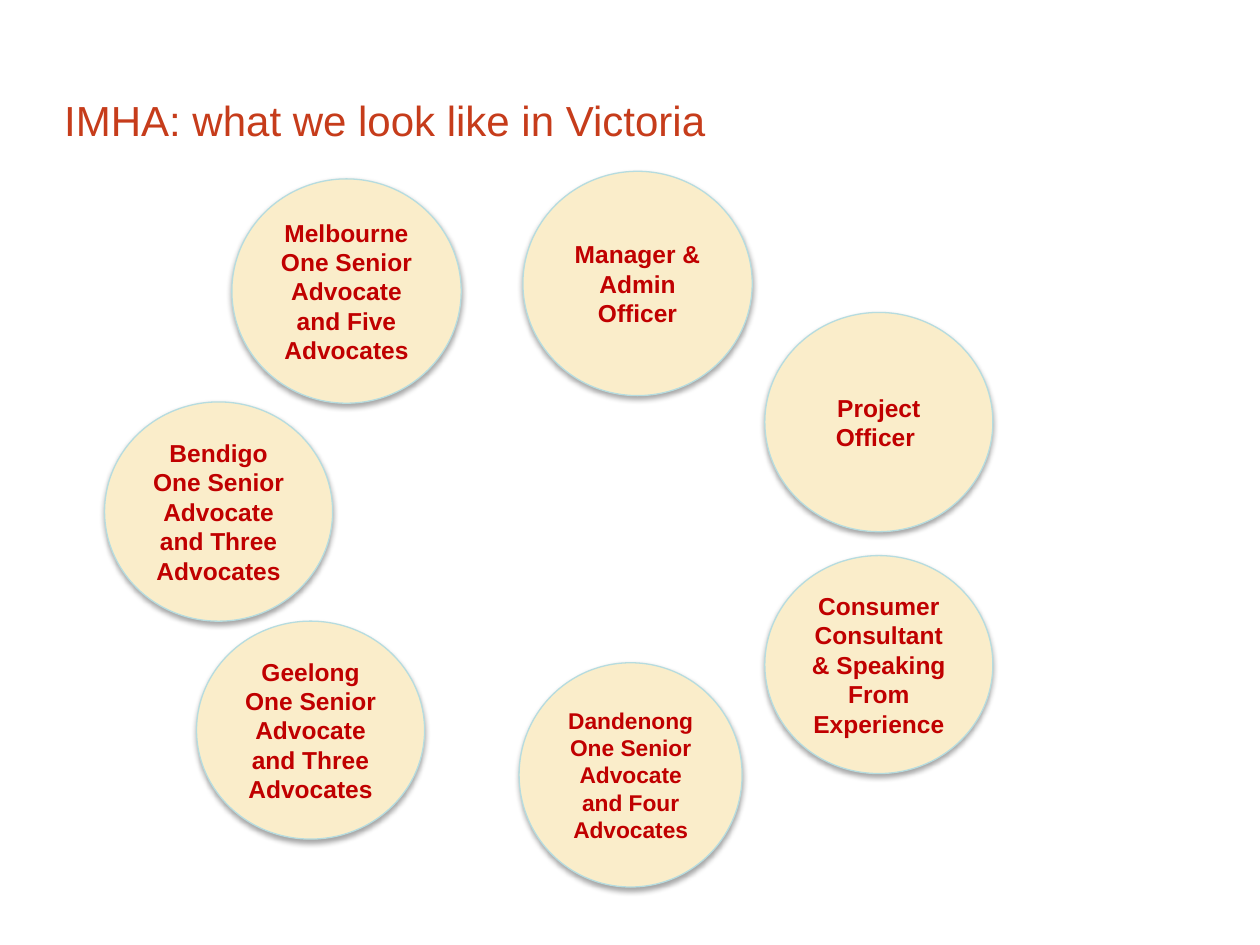
"""Build the slide showing the IMHA team across Victoria."""
import pptx
import pptx.dml.color
import pptx.enum.shapes
import pptx.enum.text
import pptx.oxml
import pptx.oxml.ns
import pptx.util

Inches, Pt = pptx.util.Inches, pptx.util.Pt
RGBColor = pptx.dml.color.RGBColor
Anchor = pptx.enum.text.MSO_ANCHOR

HEADING_RED = RGBColor(0xC6, 0x3C, 0x1B)
TEAM_RED = RGBColor(0xC0, 0x00, 0x00)
CREAM = RGBColor(0xFA, 0xED, 0xCA)
PALE_BLUE = RGBColor(0xB6, 0xDC, 0xDF)

HEADING = "IMHA: what we look like in Victoria"
TEAMS = [
    ("Melbourne\nOne Senior Advocate and Five Advocates", (1.84, 1.42, 1.82, 1.78), 14),
    ("Geelong\nOne Senior Advocate and Three Advocates", (1.56, 4.93, 1.81, 1.73), 14),
    ("Dandenong\vOne Senior Advocate and Four Advocates", (4.12, 5.26, 1.77, 1.78), 13),
    ("Bendigo\nOne Senior Advocate and Three Advocates", (0.83, 3.19, 1.81, 1.74), 14),
    ("Consumer Consultant & Speaking From Experience", (6.07, 4.41, 1.81, 1.73), 14),
    ("Manager & Admin Officer", (4.15, 1.36, 1.82, 1.78), 14),
    ("Project Officer ", (6.07, 2.48, 1.81, 1.74), 14),
]
HEADING_FRAME = {"word_wrap": True, "vertical_anchor": Anchor.BOTTOM, "margin_left": 0,
                 "margin_top": 0, "margin_right": 0, "margin_bottom": 0}
TEAM_FRAME = {"word_wrap": True, "vertical_anchor": Anchor.MIDDLE}
HEADING_PARAGRAPH = {"line_spacing": Pt(28)}
TEAM_PARAGRAPH = {"alignment": pptx.enum.text.PP_ALIGN.CENTER}
SHADOW = (
    f'<a:outerShdw {pptx.oxml.ns.nsdecls("a")} blurRad="{Pt(3.1)}" dist="{Pt(1.8)}" '
    'dir="5400000" rotWithShape="0"><a:srgbClr val="000000">'
    '<a:alpha val="35000"/></a:srgbClr></a:outerShdw>'
)


def apply(target, formats):
    for attribute, value in formats.items():
        setattr(target, attribute, value)


def write(frame, words, frame_format, paragraph_format, font_format, color):
    apply(frame, frame_format)
    frame.text = words
    for paragraph in frame.paragraphs:
        apply(paragraph, paragraph_format)
        for run in paragraph.runs:
            apply(run.font, {"name": "Arial", **font_format})
            run.font.color.rgb = color


def add_team(slide, words, box, size):
    team = slide.shapes.add_shape(pptx.enum.shapes.MSO_SHAPE.OVAL, *map(Inches, box))
    team.fill.solid()
    team.fill.fore_color.rgb = CREAM
    team.line.color.rgb = PALE_BLUE
    team.line.width = Pt(0.75)
    team.shadow.inherit = False
    effects = team.element.spPr.find(pptx.oxml.ns.qn("a:effectLst"))
    effects.append(pptx.oxml.parse_xml(SHADOW))
    write(team.text_frame, words, TEAM_FRAME, TEAM_PARAGRAPH,
          {"size": Pt(size), "bold": True}, TEAM_RED)


def main():
    deck = pptx.Presentation()
    apply(deck, {"slide_width": Inches(10), "slide_height": Inches(7.5)})
    slide = deck.slides.add_slide(deck.slide_layouts[6])
    heading = slide.shapes.add_textbox(*map(Inches, (0.51, 0.36, 9, 0.79)))
    write(heading.text_frame, HEADING, HEADING_FRAME, HEADING_PARAGRAPH,
          {"size": Pt(24)}, HEADING_RED)
    for words, box, size in TEAMS:
        add_team(slide, words, box, size)
    deck.save("out.pptx")


if __name__ == "__main__":
    main()
